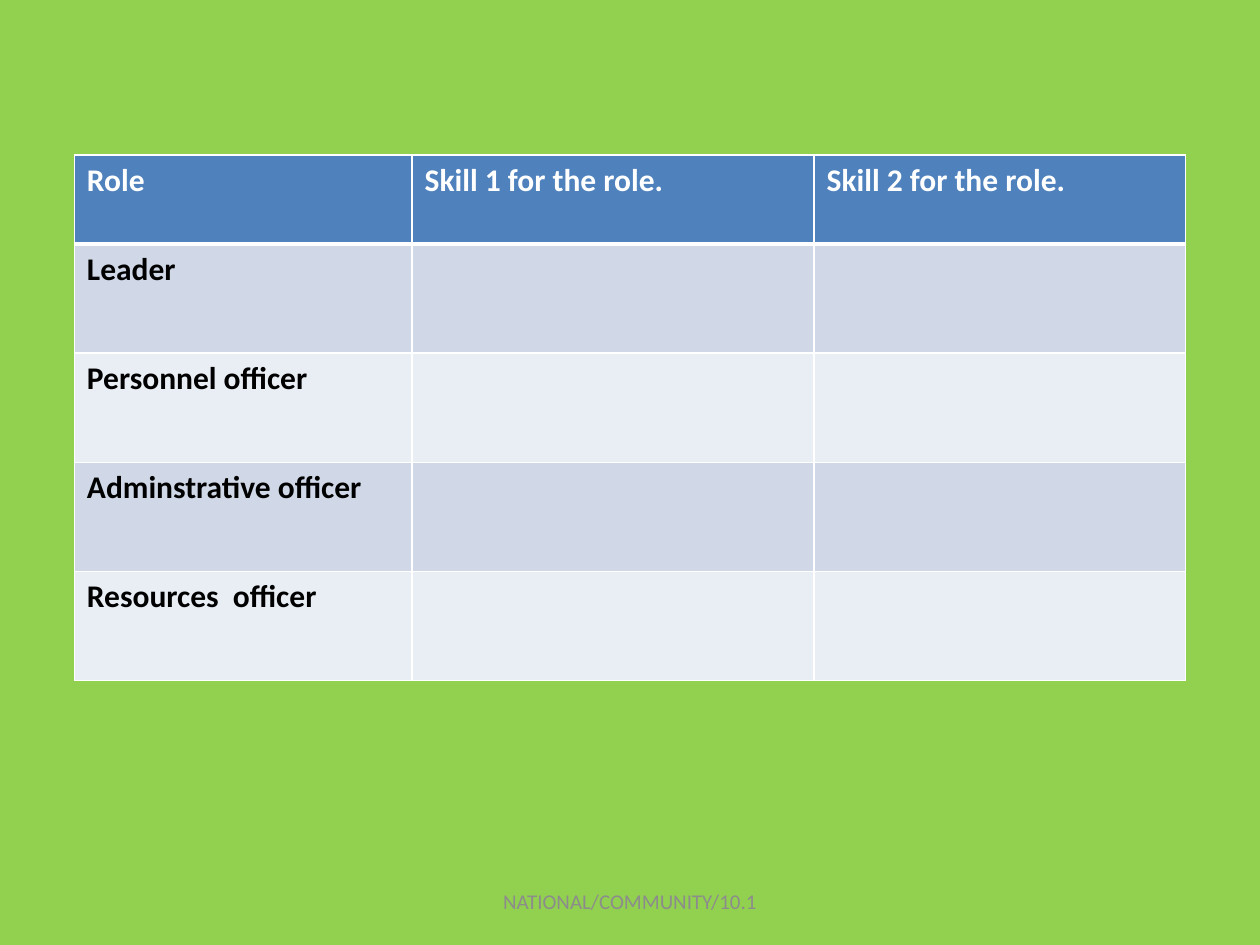
from lxml import etree
from pptx import Presentation
from pptx.dml.color import RGBColor
from pptx.enum.text import MSO_ANCHOR, PP_ALIGN
from pptx.oxml.ns import qn
from pptx.util import Pt

CENTER = PP_ALIGN.CENTER
LEFT = PP_ALIGN.LEFT
MIDDLE = MSO_ANCHOR.MIDDLE

GREEN = RGBColor(0x92, 0xD0, 0x50)
BLUE = RGBColor(0x4F, 0x81, 0xBD)
BAND_DARK = RGBColor(0xD0, 0xD8, 0xE8)
BAND_LIGHT = RGBColor(0xE9, 0xED, 0xF4)
WHITE = RGBColor(0xFF, 0xFF, 0xFF)
BLACK = RGBColor(0, 0, 0)
GRAY = RGBColor(0x8C, 0x8C, 0x8C)

HEADER = ["Role", "Skill 1 for the role.", "Skill 2 for the role."]
ROLES = ["Leader", "Personnel officer", "Adminstrative officer",
         "Resources  officer"]
COL_WIDTHS = [193, 229.7, 212.4]
HEADER_HEIGHT = 50.8
ROW_HEIGHT = 62.4


def write_text(tf, text, size=18, color=BLACK, bold=False, align=LEFT,
               font="Calibri"):
    p = tf.paragraphs[0]
    p.alignment = align
    r = p.add_run()
    r.text = text
    r.font.name = font
    r.font.size = Pt(size)
    r.font.bold = bold
    r.font.color.rgb = color


def set_borders(cell, color, bottom):
    """Draw 1 pt cell borders, with a bottom edge of the given width."""
    tc_pr = cell._tc.get_or_add_tcPr()
    widths = {"a:lnL": 1, "a:lnR": 1, "a:lnT": 1, "a:lnB": bottom}
    for i, (tag, width) in enumerate(widths.items()):
        ln = etree.Element(qn(tag), w=str(Pt(width)))
        fill = etree.SubElement(ln, qn("a:solidFill"))
        etree.SubElement(fill, qn("a:srgbClr"), val=str(color))
        tc_pr.insert(i, ln)


class SlideBuilder:
    def __init__(self, slide, background):
        self.slide = slide
        fill = slide.background.fill
        fill.solid()
        fill.fore_color.rgb = background

    def table(self, left, top, rows, widths, heights):
        tbl = self.slide.shapes.add_table(
            len(rows), len(widths), Pt(left), Pt(top),
            Pt(sum(widths)), Pt(sum(heights))).table
        for col, width in zip(tbl.columns, widths):
            col.width = Pt(width)
        for i, (row, height) in enumerate(zip(rows, heights)):
            tbl.rows[i].height = Pt(height)
            for cell, text in zip(tbl.rows[i].cells, row):
                self.cell(cell, text, i)

    def cell(self, cell, text, row):
        header = row == 0
        cell.fill.solid()
        band = BAND_DARK if row % 2 else BAND_LIGHT
        cell.fill.fore_color.rgb = BLUE if header else band
        set_borders(cell, WHITE, bottom=3 if header else 1)
        if row == 1:
            cell._tc.tcPr.find(qn("a:lnT")).set("w", str(Pt(3)))
        if text:
            write_text(cell.text_frame, text, bold=True,
                       color=WHITE if header else BLACK)

    def text(self, left, top, width, height, text, **style):
        sp = self.slide.shapes.add_textbox(Pt(left), Pt(top), Pt(width),
                                           Pt(height))
        tf = sp.text_frame
        tf.word_wrap = True
        tf.vertical_anchor = MIDDLE
        write_text(tf, text, **style)


def main():
    prs = Presentation()
    prs.slide_width, prs.slide_height = Pt(720), Pt(540)
    builder = SlideBuilder(prs.slides.add_slide(prs.slide_layouts[6]), GREEN)
    rows = [HEADER] + [[role, "", ""] for role in ROLES]
    heights = [HEADER_HEIGHT] + [ROW_HEIGHT] * len(ROLES)
    builder.table(42.5, 88.6, rows, COL_WIDTHS, heights)
    builder.text(246, 500.5, 228, 28.8, "NATIONAL/COMMUNITY/10.1",
                 size=12, color=GRAY, align=CENTER)
    prs.save("out.pptx")


if __name__ == "__main__":
    main()
